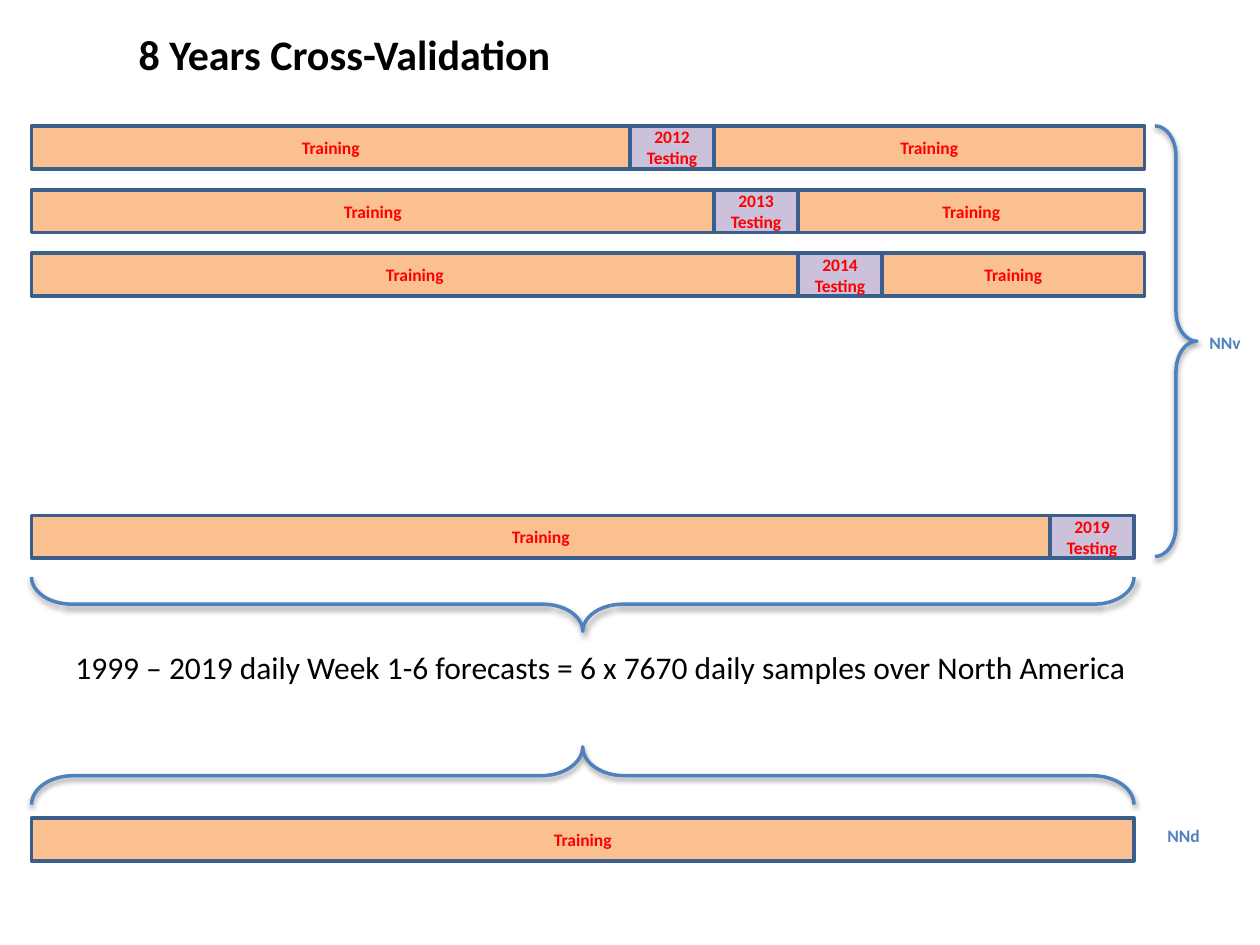
from dataclasses import dataclass

from lxml.etree import SubElement
from pptx import Presentation
from pptx.dml.color import RGBColor
from pptx.enum.shapes import MSO_SHAPE
from pptx.enum.text import MSO_ANCHOR, MSO_AUTO_SIZE, PP_ALIGN
from pptx.oxml.ns import qn
from pptx.util import Pt

TRAINING_FILL, TESTING_FILL = "FAC090", "CCC1DA"
BAR_LINE, ACCENT, BAR_TEXT, BLACK = "3A5F8C", "4F81BD", "FF0000", "000000"
LEFT, FULL_WIDTH = 18, 630
BAR_HEIGHT = 24.5
TEST_LEFT, TEST_WIDTH = 360, 48


@dataclass(frozen=True)
class Fold:
    year: int
    top: float
    slot: int
    end: float


@dataclass(frozen=True)
class Brace:
    """A right brace, given by its frame before rotation."""
    left: float
    top: float
    width: float
    height: float
    bend: float
    rotation: int = 0
    flipped: bool = False


@dataclass(frozen=True)
class Label:
    text: str
    left: float
    top: float
    width: float
    height: float
    size: float
    color: str
    bold: bool


FOLDS = [
    Fold(2012, 72, 0, 654),
    Fold(2013, 108.5, 1, 654),
    Fold(2014, 144.75, 2, 654),
    Fold(2019, 294.5, 5, 648),
]
BRACES = [
    Brace(317.5, 30.25, 31, FULL_WIDTH, 0.74, rotation=90),
    Brace(660, 72, 24, 246, 0.72),
    Brace(316.5, 128.25, 33, FULL_WIDTH, 0.72, rotation=90, flipped=True),
]
TITLE = Label("8 Years Cross-Validation", 72, 12.5, 318, 36, 24, BLACK, True)
LABELS = [
    Label("1999 – 2019 daily Week 1-6 forecasts = 6 x 7670 daily samples over North America",
          36, 367, FULL_WIDTH, 29, 18, BLACK, False),
    Label("NNd", 660, 468, 36, 19.5, 10, ACCENT, True),
    Label("NNv", 684, 186, 36, 19.5, 10, ACCENT, True),
]


def rgb(color: str) -> RGBColor:
    return RGBColor.from_string(color)


def write(frame, text: str, size: float, color: str, bold: bool,
          align=PP_ALIGN.LEFT, anchor=MSO_ANCHOR.TOP) -> None:
    frame.word_wrap = True
    frame.vertical_anchor = anchor
    paragraph = frame.paragraphs[0]
    paragraph.alignment = align
    run = paragraph.add_run()
    run.text = text
    text_format = {"name": "Calibri", "size": Pt(size), "bold": bold}
    for attribute, value in text_format.items():
        setattr(run.font, attribute, value)
    run.font.color.rgb = rgb(color)


def fill_label(holder, label: Label) -> None:
    for side in ("left", "top", "width", "height"):
        setattr(holder, side, Pt(getattr(label, side)))
    write(holder.text_frame, label.text, label.size, label.color, label.bold)
    holder.text_frame.auto_size = MSO_AUTO_SIZE.SHAPE_TO_FIT_TEXT


def add_bar(slide, text: str, left: float, top: float, width: float, fill: str) -> None:
    bar = slide.shapes.add_shape(MSO_SHAPE.RECTANGLE, Pt(left), Pt(top), Pt(width), Pt(BAR_HEIGHT))
    bar.shadow.inherit = False
    bar.fill.solid()
    bar.fill.fore_color.rgb = rgb(fill)
    bar.line.color.rgb = rgb(BAR_LINE)
    bar.line.width = Pt(2)
    write(bar.text_frame, text, 10, BAR_TEXT, True, PP_ALIGN.CENTER, MSO_ANCHOR.MIDDLE)


def add_fold(slide, fold: Fold) -> None:
    """Draw training data on both sides of the year held out for testing."""
    test_left = TEST_LEFT + fold.slot * TEST_WIDTH
    test_end = test_left + TEST_WIDTH
    add_bar(slide, "Training", LEFT, fold.top, test_left - LEFT, TRAINING_FILL)
    add_bar(slide, f"{fold.year} Testing", test_left, fold.top, TEST_WIDTH, TESTING_FILL)
    if fold.end > test_end:
        add_bar(slide, "Training", test_end, fold.top, fold.end - test_end, TRAINING_FILL)


def add_soft_shadow(shape) -> None:
    shape.shadow.inherit = False
    effects = shape._element.spPr.find(qn("a:effectLst"))
    shadow = SubElement(effects, qn("a:outerShdw"), blurRad=str(Pt(3.1)), dist=str(Pt(1.6)),
                        dir="5400000", rotWithShape="0")
    color = SubElement(shadow, qn("a:srgbClr"), val=BLACK)
    SubElement(color, qn("a:alpha"), val="38000")


def add_brace(slide, brace: Brace) -> None:
    shape = slide.shapes.add_shape(MSO_SHAPE.RIGHT_BRACE, Pt(brace.left), Pt(brace.top),
                                   Pt(brace.width), Pt(brace.height))
    shape.adjustments[0] = brace.bend
    shape.adjustments[1] = 0.5
    shape.rotation = brace.rotation
    if brace.flipped:
        shape._element.spPr.xfrm.set("flipH", "1")
    shape.fill.background()
    shape.line.color.rgb = rgb(ACCENT)
    shape.line.width = Pt(2)
    add_soft_shadow(shape)


def main() -> None:
    deck = Presentation()
    deck.slide_width, deck.slide_height = Pt(720), Pt(540)
    slide = deck.slides.add_slide(deck.slide_layouts[5])
    fill_label(slide.shapes.title, TITLE)
    for fold in FOLDS:
        add_fold(slide, fold)
    add_bar(slide, "Training", LEFT, 467.5, FULL_WIDTH, TRAINING_FILL)
    for brace in BRACES:
        add_brace(slide, brace)
    for label in LABELS:
        fill_label(slide.shapes.add_textbox(0, 0, 0, 0), label)
    deck.save("out.pptx")


if __name__ == "__main__":
    main()
